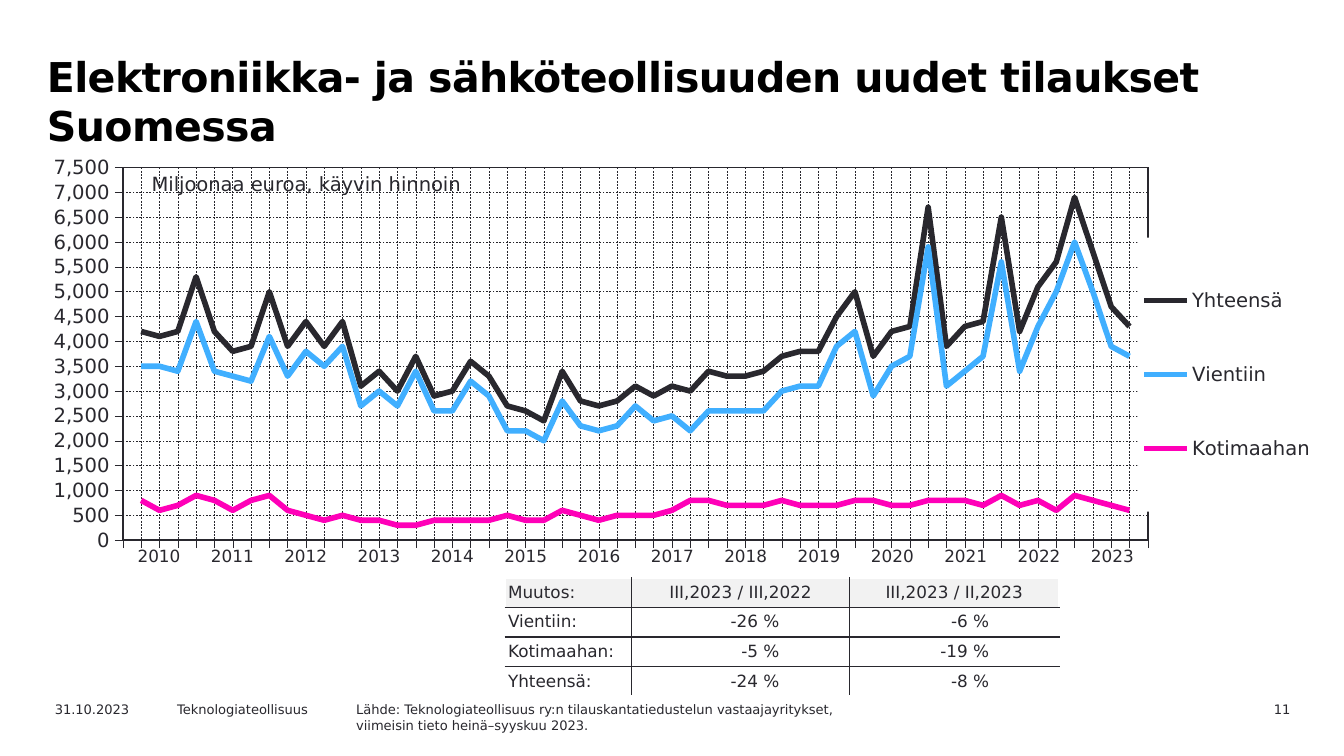
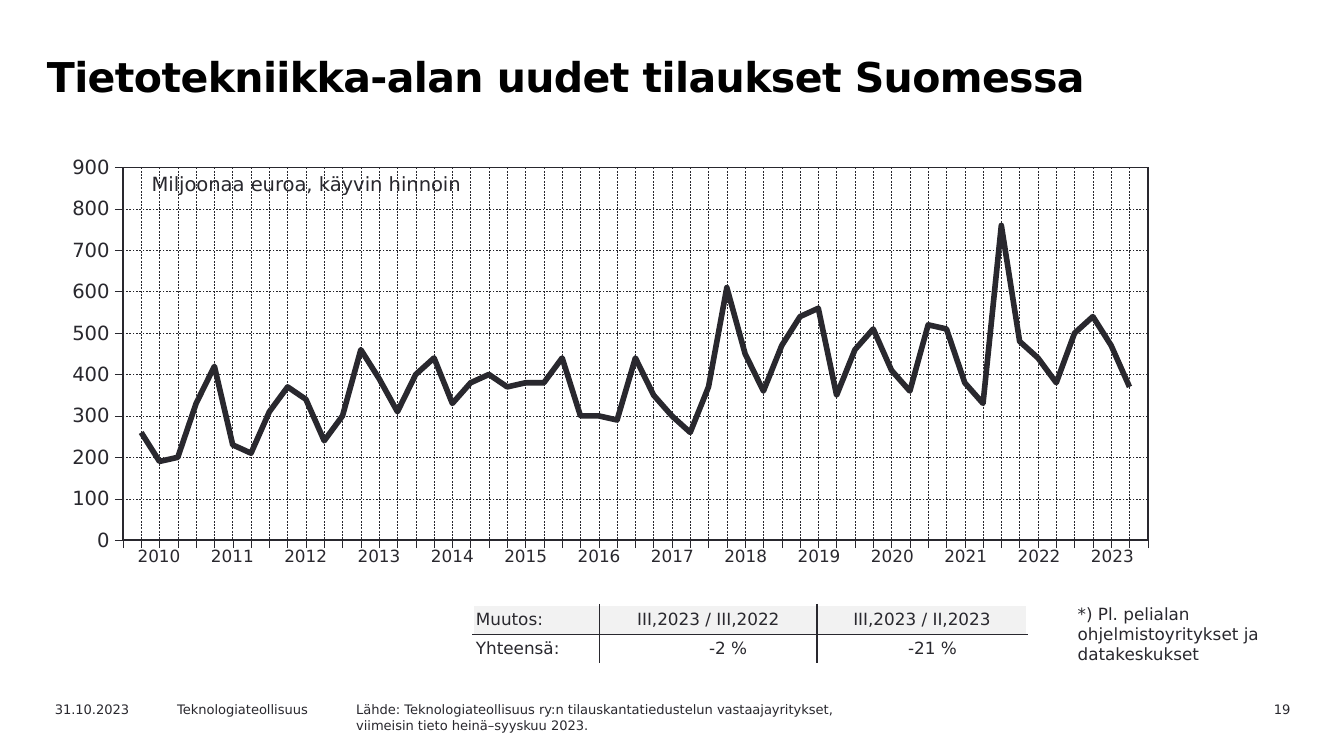
from dataclasses import dataclass

import pptx
import pptx.chart.data
import pptx.dml.color
import pptx.enum.chart
import pptx.enum.dml
import pptx.enum.text
import pptx.oxml
import pptx.oxml.ns
import pptx.util
from lxml import etree

Pt = pptx.util.Pt
RGB = pptx.dml.color.RGBColor.from_string
Align = pptx.enum.text.PP_ALIGN
Anchor = pptx.enum.text.MSO_ANCHOR
qn = pptx.oxml.ns.qn
NS = pptx.oxml.ns.nsdecls("a", "c")


@dataclass(frozen=True)
class Theme:
    font: str = "DejaVu Sans"
    chart_font: str = "Arial"
    ink: str = "29282E"
    black: str = "000000"
    white: str = "FFFFFF"
    header: str = "F2F2F2"
    lines: tuple = ("29282E", "40AFFF", "FF00B8")
    title: float = 22
    axis: float = 10.5
    table: float = 9
    footer: float = 7
    chart: float = 19.5


T = Theme()

prs = pptx.Presentation()
prs.slide_width = pptx.util.Inches(10)
prs.slide_height = pptx.util.Inches(5.625)


def grid(col, row, cols, rows):
    """Turn places on a grid of 100 columns and 100 rows into slide lengths."""
    w, h = prs.slide_width / 100, prs.slide_height / 100
    return [round(n) for n in (col * w, row * h, cols * w, rows * h)]


def write(p, text, size, align=Align.LEFT, color=T.ink, bold=False):
    p.alignment = align
    p.space_before = Pt(0)
    r = p.add_run()
    r.text = text
    r.font.name, r.font.size, r.font.bold = T.font, Pt(size), bold
    r.font.color.rgb = RGB(color)
    return r


PERIODS = ["Muutos:", "III,2023 / III,2022", "III,2023 / II,2023"]
SOURCE = [
    "Lähde: Teknologiateollisuus ry:n tilauskantatiedustelun vastaajayritykset,",
    "viimeisin tieto heinä–syyskuu 2023.",
]
YEARS = [str(year) for year in range(2010, 2024)]
NO_STYLE = "{2D5ABB26-0587-4C30-8999-92F81FD0307C}"

slides = [
    dict(
        title="Elektroniikka- ja sähköteollisuuden uudet tilaukset Suomessa",
        number="11", top=7500, step=500, table_at=(37.6, 76.44), note=None,
        changes=[["Vientiin:", "-26 %", "-6 %"],
                 ["Kotimaahan:", "-5 %", "-19 %"],
                 ["Yhteensä:", "-24 %", "-8 %"]],
        series={
            "Yhteensä": [
                4200, 4100, 4200, 5300, 4200, 3800, 3900, 5000, 3900, 4400, 3900,
                4400, 3100, 3400, 3000, 3700, 2900, 3000, 3600, 3300, 2700, 2600,
                2400, 3400, 2800, 2700, 2800, 3100, 2900, 3100, 3000, 3400, 3300,
                3300, 3400, 3700, 3800, 3800, 4500, 5000, 3700, 4200, 4300, 6700,
                3900, 4300, 4400, 6500, 4200, 5100, 5600, 6900, 5800, 4700, 4300],
            "Vientiin": [
                3500, 3500, 3400, 4400, 3400, 3300, 3200, 4100, 3300, 3800, 3500,
                3900, 2700, 3000, 2700, 3400, 2600, 2600, 3200, 2900, 2200, 2200,
                2000, 2800, 2300, 2200, 2300, 2700, 2400, 2500, 2200, 2600, 2600,
                2600, 2600, 3000, 3100, 3100, 3900, 4200, 2900, 3500, 3700, 5900,
                3100, 3400, 3700, 5600, 3400, 4300, 5000, 6000, 5000, 3900, 3700],
            "Kotimaahan": [
                800, 600, 700, 900, 800, 600, 800, 900, 600, 500, 400,
                500, 400, 400, 300, 300, 400, 400, 400, 400, 500, 400,
                400, 600, 500, 400, 500, 500, 500, 600, 800, 800, 700,
                700, 700, 800, 700, 700, 700, 800, 800, 700, 700, 800,
                800, 800, 700, 900, 700, 800, 600, 900, 800, 700, 600],
        },
    ),
    dict(
        title="Tietotekniikka-alan uudet tilaukset Suomessa",
        number="19", top=900, step=100, table_at=(35.2, 80),
        note="*) Pl. pelialan ohjelmistoyritykset ja datakeskukset",
        changes=[["Yhteensä:", "-2 %", "-21 %"]],
        series={
            "Series 1": [
                260, 190, 200, 330, 420, 230, 210, 310, 370, 340, 240,
                300, 460, 390, 310, 400, 440, 330, 380, 400, 370, 380,
                380, 440, 300, 300, 290, 440, 350, 300, 260, 370, 610,
                450, 360, 470, 540, 560, 350, 460, 510, 410, 360, 520,
                510, 380, 330, 760, 480, 440, 380, 500, 540, 470, 370],
        },
    ),
]

for content in slides:
    s = prs.slides.add_slide(prs.slide_layouts[1])

    # Title and source line
    title, source = s.placeholders
    title.left, title.top, title.width, title.height = grid(2.8, 5.51, 92.1, 12.62)
    source.left, source.top, source.width, source.height = grid(25.5, 91.91, 50.7, 3.2)
    for sp in (title, source):
        sp.text_frame.auto_size = pptx.enum.text.MSO_AUTO_SIZE.NONE
        sp.text_frame.vertical_anchor = Anchor.TOP
    tf = title.text_frame
    tf.margin_left = tf.margin_top = Pt(5)
    r = write(tf.paragraphs[0], content["title"], T.title, color=T.black, bold=True)
    r.font._element.set("spc", "-30")
    tf = source.text_frame
    for i, line in enumerate(SOURCE):
        p = tf.add_paragraph() if i else tf.paragraphs[0]
        pPr = p._p.get_or_add_pPr()
        pPr.set("marL", "0")
        pPr.set("indent", "0")
        etree.SubElement(pPr, qn("a:buNone"))
        write(p, line, T.footer)

    # Chart, with an empty quarter at each end
    data = pptx.chart.data.CategoryChartData(number_format="#,##0")
    quarters = len(YEARS) * 4 + 1
    data.categories = [str(n + 1) for n in range(quarters)]
    for name, values in content["series"].items():
        data.add_series(name, [None, *values, None])
    chart = s.shapes.add_chart(pptx.enum.chart.XL_CHART_TYPE.LINE,
                               *grid(1.2, 19.73, 96.9, 59.2), data).chart
    chart.has_title = False
    chart.font.name, chart.font.size, chart.font.bold = T.chart_font, Pt(T.chart), True
    chart.font.color.rgb = RGB(T.ink)
    chart.plots[0].vary_by_categories = False
    for series, color in zip(chart.plots[0].series, T.lines):
        series.smooth = False
        series.marker.style = pptx.enum.chart.XL_MARKER_STYLE.NONE
        series.format.line.color.rgb = RGB(color)
        series.format.line.width = Pt(3)

    quarter_axis, value_axis = chart.category_axis, chart.value_axis
    for axis in (quarter_axis, value_axis):
        axis.has_major_gridlines = True
        axis.major_tick_mark = pptx.enum.chart.XL_TICK_MARK.OUTSIDE
        axis.minor_tick_mark = pptx.enum.chart.XL_TICK_MARK.NONE
        axis.format.line.color.rgb = RGB(T.ink)
        axis.format.line.width = Pt(0.22)
        gridline = axis.major_gridlines.format.line
        gridline.color.rgb = RGB(T.ink)
        gridline.width = Pt(0.25)
        gridline.dash_style = pptx.enum.dml.MSO_LINE.DASH
    quarter_axis.tick_label_position = pptx.enum.chart.XL_TICK_LABEL_POSITION.NONE
    value_axis.minimum_scale, value_axis.maximum_scale = 0, content["top"]
    value_axis.major_unit = content["step"]
    value_axis.tick_labels.number_format = "#,##0"
    value_axis.tick_labels.number_format_is_linked = False
    valAx = value_axis._element
    for old in valAx.findall(qn("c:crossBetween")):
        valAx.remove(old)
    valAx.find(qn("c:crosses")).addnext(
        pptx.oxml.parse_xml(f'<c:crossBetween {NS} val="midCat"/>'))

    plot_area = chart._chartSpace.chart.plotArea
    plot_area.append(pptx.oxml.parse_xml(
        f'<c:spPr {NS}><a:noFill/><a:ln w="12700"><a:solidFill>'
        f'<a:srgbClr val="{T.ink}"/></a:solidFill></a:ln></c:spPr>'))
    layouts = [(plot_area, '<c:layoutTarget val="inner"/>', (0.082, 0.041, 0.787, 0.833))]
    fonts = [value_axis.tick_labels.font]
    chart.has_legend = len(content["series"]) > 1
    if chart.has_legend:
        legend = chart.legend
        legend.position = pptx.enum.chart.XL_LEGEND_POSITION.RIGHT
        legend.include_in_layout = False
        fonts.append(legend.font)
        layouts.append((legend._element, "", (0.861, 0.198, 0.138, 0.612)))
        legend._element.find(qn("c:txPr")).addprevious(pptx.oxml.parse_xml(
            f'<c:spPr {NS}><a:solidFill><a:srgbClr val="{T.white}"/></a:solidFill></c:spPr>'))
    for font in fonts:
        font.name, font.size, font.bold = T.font, Pt(T.axis), False
        font.color.rgb = RGB(T.ink)
    for part, target, shares in layouts:
        for old in part.findall(qn("c:layout")):
            part.remove(old)
        modes = '<c:xMode val="edge"/><c:yMode val="edge"/>'
        sizes = "".join(f'<c:{k} val="{v}"/>' for k, v in zip("xywh", shares))
        part.insert(0 if part is plot_area else 1, pptx.oxml.parse_xml(
            f"<c:layout {NS}><c:manualLayout>{target}{modes}{sizes}</c:manualLayout></c:layout>"))

    # Unit label, footers and note
    texts = [
        ("Miljoonaa euroa, käyvin hinnoin", (10.3, 21.87, 26, 4.8), T.axis, Align.LEFT, False),
        (content["number"], (87.6, 91.91, 9.4, 3.2), T.footer, Align.RIGHT, True),
        ("31.10.2023", (3.1, 91.91, 10, 3.2), T.footer, Align.LEFT, True),
        ("Teknologiateollisuus", (12.2, 91.91, 14.2, 3.2), T.footer, Align.LEFT, True),
    ]
    if content["note"]:
        texts.append((content["note"], (79.2, 78.93, 16.6, 9.96), T.table, Align.LEFT, True))
    for text, place, size, align, wrap in texts:
        tf = s.shapes.add_textbox(*grid(*place)).text_frame
        tf.word_wrap = wrap
        write(tf.paragraphs[0], text, size, align)

    # Change table and the row of years under the chart
    changes = [PERIODS, *content["changes"]]
    row_height = 3.91
    tables = [
        (changes, content["table_at"], (9.4, 16.2, 15.6), row_height),
        ([YEARS], (9.1, 71.47), [76.4 / len(YEARS)] * len(YEARS), 5.51),
    ]
    for rows, at, widths, height in tables:
        table = s.shapes.add_table(
            len(rows), len(widths), *grid(*at, sum(widths), height * len(rows))).table
        table.first_row = table.horz_banding = False
        table._tbl.tblPr.find(qn("a:tableStyleId")).text = NO_STYLE
        for column, width in zip(table.columns, widths):
            column.width = grid(0, 0, width, 0)[2]
        for y, row in enumerate(rows):
            for x, text in enumerate(row):
                cell = table.cell(y, x)
                p = cell.text_frame.paragraphs[0]
                if rows is not changes:
                    cell.fill.background()
                    write(p, text, T.table, Align.CENTER)
                    continue
                figure = x > 0 and y > 0
                align = Align.RIGHT if figure else Align.CENTER if x else Align.LEFT
                write(p, text, T.table, align)
                cell.vertical_anchor = Anchor.MIDDLE
                cell.margin_left = cell.margin_top = cell.margin_bottom = Pt(1.5)
                cell.margin_right = Pt(37.5 if figure else 1.5)
                outer = dict(L=x == 0, R=x == len(row) - 1, T=y == 0, B=y == len(rows) - 1)
                for side, is_outer in outer.items():
                    color = T.white if is_outer else T.ink
                    cell._tc.get_or_add_tcPr().append(pptx.oxml.parse_xml(
                        f'<a:ln{side} {NS} w="12700"><a:solidFill>'
                        f'<a:srgbClr val="{color}"/></a:solidFill></a:ln{side}>'))
                cell.fill.solid()
                cell.fill.fore_color.rgb = RGB(T.white if y else T.header)

prs.save("out.pptx")
